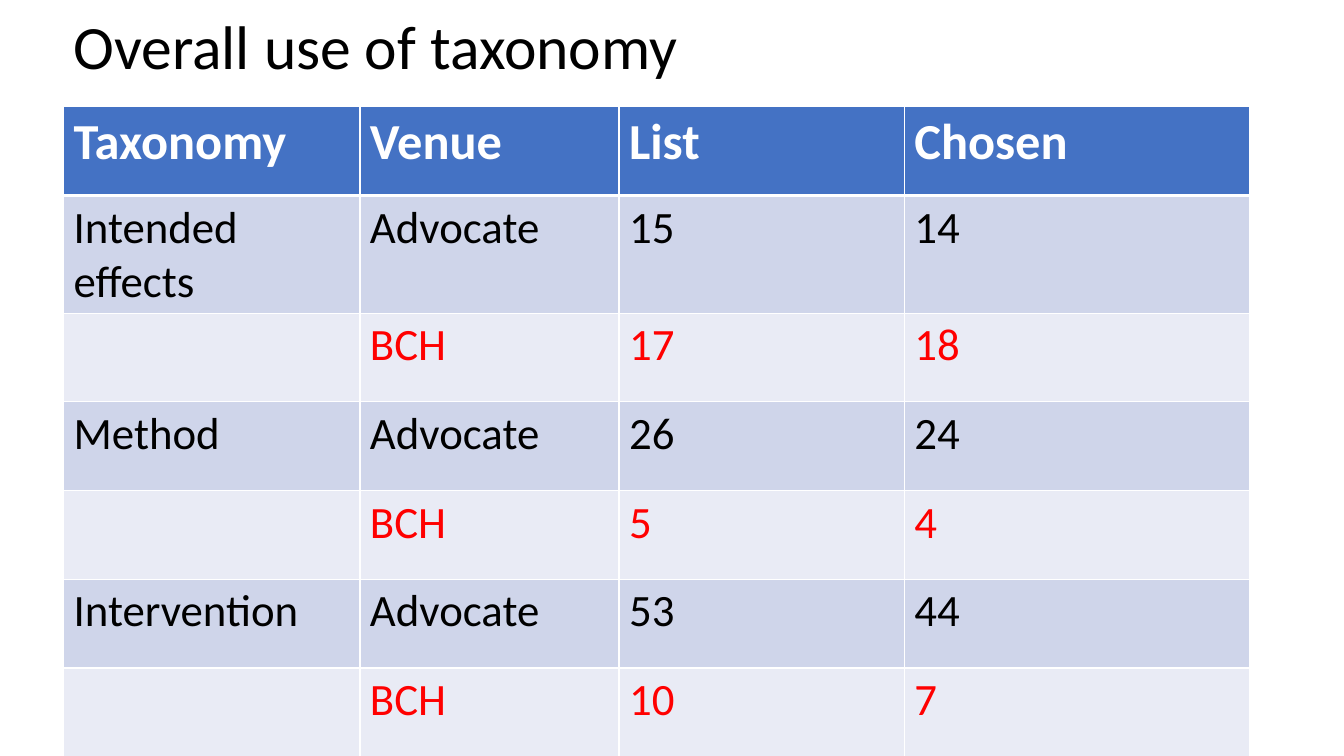
from lxml.etree import SubElement
from pptx import Presentation
from pptx.dml.color import RGBColor
from pptx.enum.text import MSO_ANCHOR
from pptx.oxml.ns import qn
from pptx.util import Inches, Pt

TITLE = "Overall use of taxonomy"
HEADER = ("Taxonomy", "Venue", "List", "Chosen")
ROWS = [
    ("Intended effects", "Advocate", "15", "14"),
    ("", "BCH", "17", "18"),
    ("Method", "Advocate", "26", "24"),
    ("", "BCH", "5", "4"),
    ("Intervention", "Advocate", "53", "44"),
    ("", "BCH", "10", "7"),
]
COL_WIDTHS = (2.94, 2.57, 2.83, 3.42)
ROW_HEIGHTS = [0.88, 1.15] + [0.88] * 5
LEFT, TABLE_TOP = 0.63, 1.06
FONT = "Calibri"
WHITE, BLACK, RED = "FFFFFF", "000000", "FF0000"
HEADER_FILL, ADVOCATE_FILL, BCH_FILL = "4472C4", "CFD5EA", "E9EBF5"


def color(hex_code):
    return RGBColor.from_string(hex_code)


def add_run(p, text, size, hex_code, bold=False):
    r = p.add_run()
    r.text = text
    r.font.name = FONT
    r.font.size = Pt(size)
    r.font.bold = bold
    r.font.color.rgb = color(hex_code)


def set_borders(cell, top, bottom):
    """Draw white cell borders; top and bottom widths are in points."""
    tc_pr = cell._tc.get_or_add_tcPr()
    for side, width in (("L", 1), ("R", 1), ("T", top), ("B", bottom)):
        ln = SubElement(tc_pr, qn("a:ln" + side), w=str(Pt(width)))
        fill = SubElement(ln, qn("a:solidFill"))
        SubElement(fill, qn("a:srgbClr"), val=WHITE)


def row_style(row):
    """Return fill, text colour, size, bold, top border and bottom border."""
    if row == 0:
        return HEADER_FILL, WHITE, 36, True, 1, 3
    top = 3 if row == 1 else 1
    if row % 2:
        return ADVOCATE_FILL, BLACK, 32, False, top, 1
    return BCH_FILL, RED, 32, False, top, 1


def add_title(slide):
    sp = slide.shapes.add_textbox(Inches(LEFT), Inches(-0.23), Inches(11.24), Inches(1.45))
    tf = sp.text_frame
    tf.word_wrap = True
    tf.vertical_anchor = MSO_ANCHOR.MIDDLE
    p = tf.paragraphs[0]
    p.line_spacing = 0.9
    add_run(p, TITLE, 44, BLACK)


def add_taxonomy_table(slide):
    frame = slide.shapes.add_table(
        len(ROW_HEIGHTS), len(COL_WIDTHS), Inches(LEFT), Inches(TABLE_TOP),
        Inches(sum(COL_WIDTHS)), Inches(sum(ROW_HEIGHTS)))
    table = frame.table
    for column, width in zip(table.columns, COL_WIDTHS):
        column.width = Inches(width)
    for i, (texts, height) in enumerate(zip([HEADER] + ROWS, ROW_HEIGHTS)):
        table.rows[i].height = Inches(height)
        fill, text_color, size, bold, top, bottom = row_style(i)
        for j, text in enumerate(texts):
            cell = table.cell(i, j)
            set_borders(cell, top, bottom)
            cell.fill.solid()
            cell.fill.fore_color.rgb = color(fill)
            if text:
                add_run(cell.text_frame.paragraphs[0], text, size, text_color, bold)


def main():
    prs = Presentation()
    prs.slide_width, prs.slide_height = Inches(13.33), Inches(7.5)
    slide = prs.slides.add_slide(prs.slide_layouts[6])
    add_title(slide)
    add_taxonomy_table(slide)
    prs.save("out.pptx")


if __name__ == "__main__":
    main()
